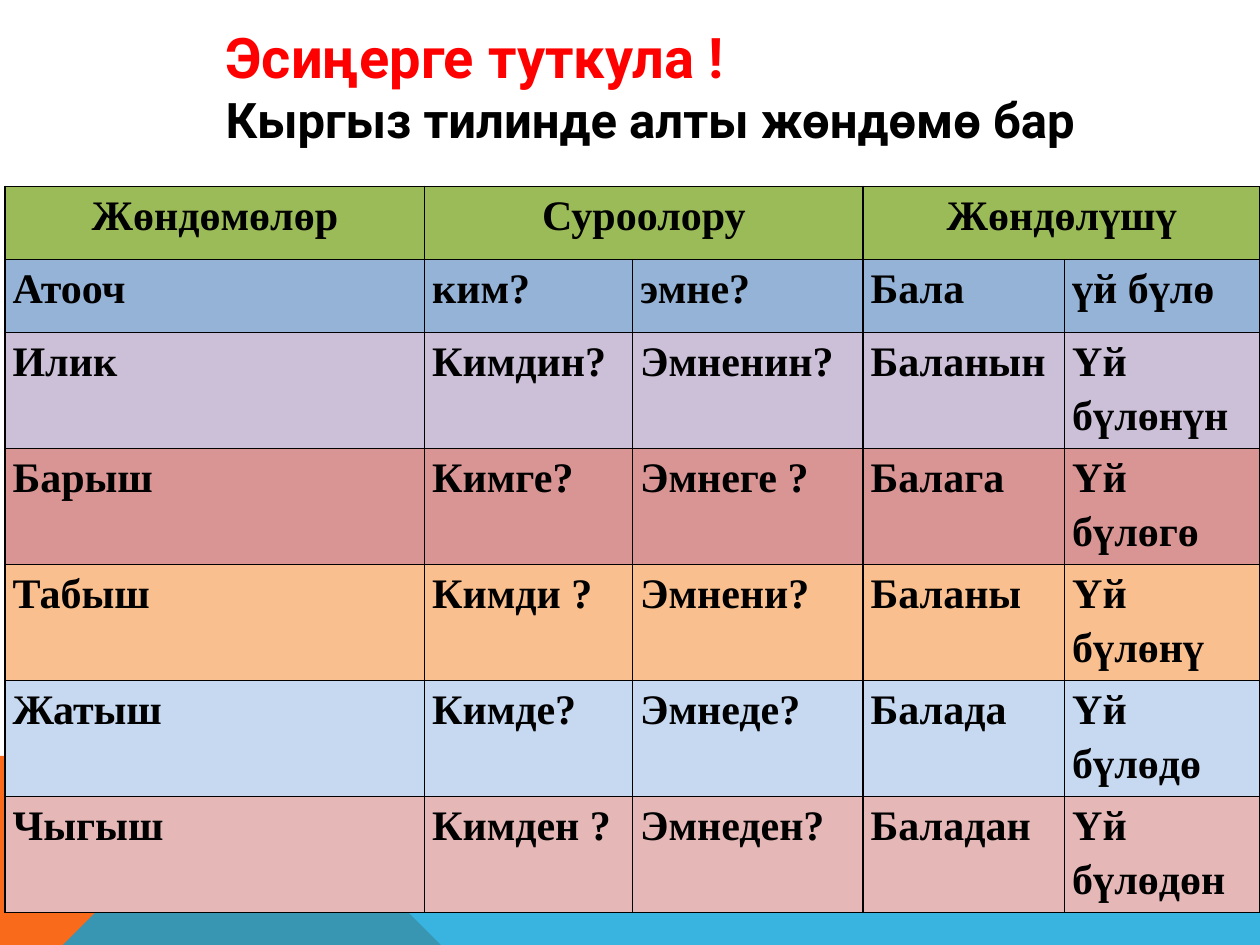
from dataclasses import dataclass

import pptx
import pptx.dml.color
import pptx.enum.text
import pptx.oxml
import pptx.oxml.ns
import pptx.util
from pptx.dml.color import RGBColor
from pptx.util import Inches

BLACK = RGBColor(0x00, 0x00, 0x00)
RED = RGBColor(0xFF, 0x00, 0x00)
ORANGE = RGBColor(0xF9, 0x6A, 0x1B)
BLUE = RGBColor(0x08, 0xA1, 0xD9)
GREEN = RGBColor(0x9B, 0xBB, 0x59)
STEEL = RGBColor(0x95, 0xB3, 0xD7)
LILAC = RGBColor(0xCC, 0xC0, 0xD9)
ROSE = RGBColor(0xD9, 0x95, 0x94)
PEACH = RGBColor(0xFA, 0xBF, 0x8F)
SKY = RGBColor(0xC6, 0xD9, 0xF1)
PINK = RGBColor(0xE5, 0xB8, 0xB7)

ALIGN = pptx.enum.text.PP_ALIGN


@dataclass
class Band:
    points: list[tuple[float, float]]
    color: RGBColor
    opacity: int = 100


@dataclass
class TitleLine:
    text: str
    size: int
    color: RGBColor


@dataclass
class CaseRow:
    color: RGBColor
    height: float
    texts: list[str]


BANDS = [
    Band([(0, 7.5), (0, 5.52), (2.23, 5.52), (3.91, 7.5)], ORANGE),
    Band([(0, 7.5), (2.23, 5.52), (10, 5.53), (10, 7.5)], BLUE, 80),
]
TITLE = [
    TitleLine("Эсиңерге туткула !", 32, RED),
    TitleLine("Кыргыз тилинде алты жөндөмө бар", 28, BLACK),
]
COLUMNS = [3.33, 1.65, 1.83, 1.6, 1.55]
ROWS = [
    CaseRow(GREEN, 0.58, ["Жөндөмөлөр", "Суроолору", "", "Жөндөлүшү", ""]),
    CaseRow(STEEL, 0.58, ["Атооч", "ким?", "эмне?", "Бала", "үй бүлө"]),
    CaseRow(LILAC, 0.91, ["Илик", "Кимдин?", "Эмненин?", "Баланын", "Үй бүлөнүн"]),
    CaseRow(ROSE, 0.91, ["Барыш", "Кимге?", "Эмнеге ?", "Балага", "Үй бүлөгө"]),
    CaseRow(PEACH, 0.91, ["Табыш", "Кимди ?", "Эмнени?", "Баланы", "Үй бүлөнү"]),
    CaseRow(SKY, 0.91, ["Жатыш", "Кимде?", "Эмнеде?", "Балада", "Үй бүлөдө"]),
    CaseRow(PINK, 0.91, ["Чыгыш", "Кимден ?", "Эмнеден?", "Баладан", "Үй бүлөдөн"]),
]


def add_run(p, text: str, font: str, size: int, color: RGBColor) -> None:
    r = p.add_run()
    r.text = text
    r.font.name = font
    r.font.size = pptx.util.Pt(size)
    r.font.bold = True
    r.font.color.rgb = color


def add_band(s, band: Band) -> None:
    builder = s.shapes.build_freeform(*band.points[0], scale=Inches(1))
    builder.add_line_segments(band.points[1:], close=True)
    sp = builder.convert_to_shape()
    sp.shadow.inherit = False
    sp.fill.solid()
    sp.fill.fore_color.rgb = band.color
    sp.line.fill.background()
    if band.opacity < 100:
        color = sp.fill._xPr.find(".//" + pptx.oxml.ns.qn("a:srgbClr"))
        alpha = pptx.oxml.parse_xml(
            f'<a:alpha {pptx.oxml.ns.nsdecls("a")} val="{band.opacity * 1000}"/>'
        )
        color.append(alpha)


def set_title(s, lines: list[TitleLine]) -> None:
    sp = s.shapes.title
    sp.left, sp.top = Inches(1.69), Inches(0.13)
    sp.width, sp.height = Inches(7.24), Inches(1.11)
    tf = sp.text_frame
    tf.word_wrap = True
    tf.auto_size = pptx.enum.text.MSO_AUTO_SIZE.SHAPE_TO_FIT_TEXT
    tf.vertical_anchor = pptx.enum.text.MSO_ANCHOR.TOP
    for i, line in enumerate(lines):
        p = tf.add_paragraph() if i else tf.paragraphs[0]
        p.alignment = ALIGN.LEFT
        add_run(p, line.text, "Roboto", line.size, line.color)


def set_borders(cell) -> None:
    tc_pr = cell._tc.get_or_add_tcPr()
    for side in ("lnL", "lnR", "lnT", "lnB"):
        tc_pr.append(pptx.oxml.parse_xml(
            f'<a:{side} {pptx.oxml.ns.nsdecls("a")} w="{pptx.util.Pt(1)}">'
            f'<a:solidFill><a:srgbClr val="{BLACK}"/></a:solidFill></a:{side}>'
        ))


def format_cell(cell, text: str, color: RGBColor, align) -> None:
    set_borders(cell)
    cell.fill.solid()
    cell.fill.fore_color.rgb = color
    cell.margin_left = cell.margin_right = Inches(0.06)
    cell.margin_top = cell.margin_bottom = 0
    if text:
        p = cell.text_frame.paragraphs[0]
        p.alignment = align
        p.line_spacing = 1.15
        add_run(p, text, "Times New Roman", 24, BLACK)


def add_case_table(s, columns: list[float], rows: list[CaseRow]) -> None:
    frame = s.shapes.add_table(
        len(rows), len(columns), Inches(0.04), Inches(1.48),
        Inches(sum(columns)), Inches(sum(row.height for row in rows)),
    )
    table = frame.table
    table.first_row = False
    table.horz_banding = False
    for column, width in zip(table.columns, columns):
        column.width = Inches(width)
    for i, row in enumerate(rows):
        table.rows[i].height = Inches(row.height)
        align = ALIGN.JUSTIFY if i else ALIGN.CENTER
        for j, text in enumerate(row.texts):
            format_cell(table.cell(i, j), text, row.color, align)
    for j in (1, 3):
        table.cell(0, j).merge(table.cell(0, j + 1))


def main() -> None:
    prs = pptx.Presentation()
    prs.slide_width, prs.slide_height = Inches(10), Inches(7.5)
    s = prs.slides.add_slide(prs.slide_layouts[5])
    for band in BANDS:
        add_band(s, band)
    set_title(s, TITLE)
    add_case_table(s, COLUMNS, ROWS)
    prs.save("out.pptx")


if __name__ == "__main__":
    main()
